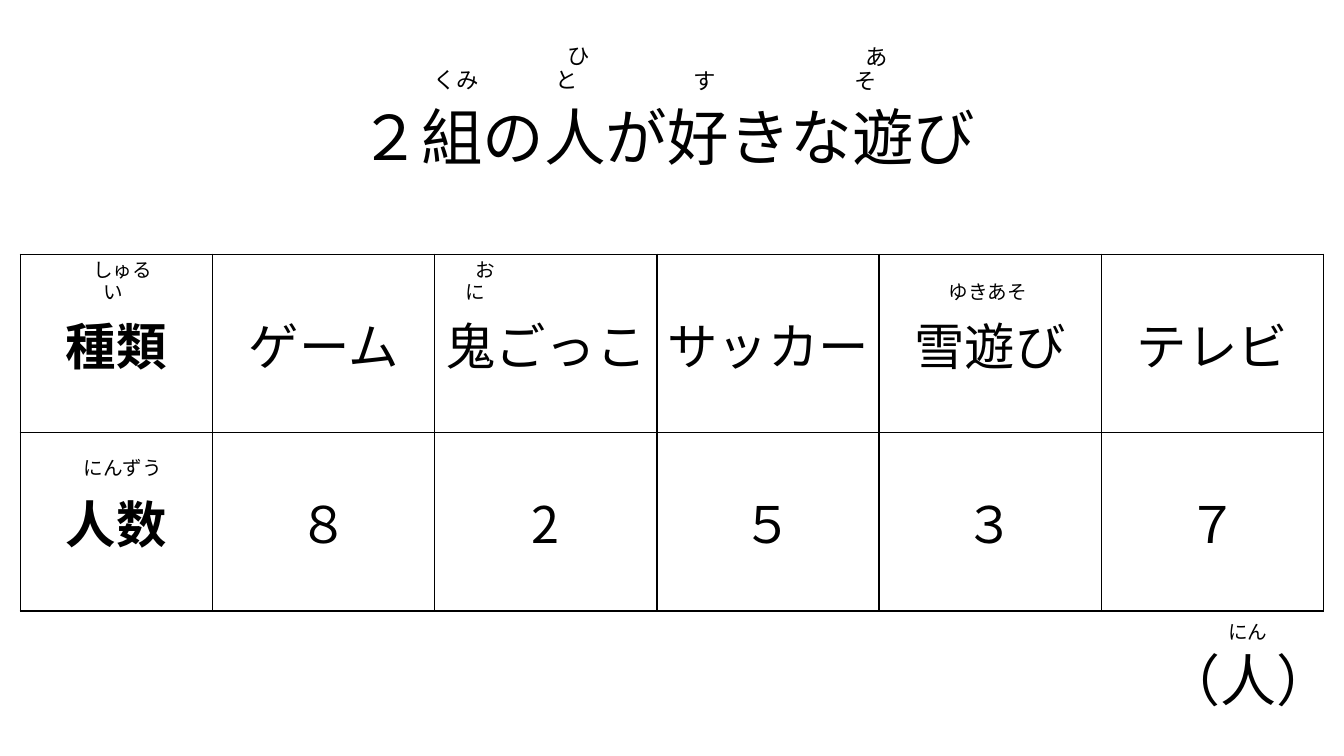
from lxml.etree import SubElement
from pptx import Presentation
from pptx.dml.color import RGBColor
from pptx.enum.text import MSO_ANCHOR as Anchor, MSO_AUTO_SIZE as AutoSize, PP_ALIGN as Align
from pptx.oxml import parse_xml
from pptx.oxml.ns import nsdecls, qn
from pptx.util import Pt

FONT = "Noto Sans CJK JP"
COLORS = {"ink": "000000", "paper": "FFFFFF"}

GAMES = [
    ("種類", "人数"),
    ("ゲーム", "８"),
    ("鬼ごっこ", "2"),
    ("サッカー", "５"),
    ("雪遊び", "３"),
    ("テレビ", "７"),
]
LABEL_WIDTH, GAME_WIDTH, ROW_HEIGHT = 137.5, 158.7, 127.5

TITLE_READINGS = [
    ("　くみ", 283.7, 43.9, 68.4),
    ("　あそ", 589, 44.6, 58.3),
    ("　ひと", 375.8, 43.9, 58.3),
    ("　す", 461.5, 44.6, 68.4),
]
TABLE_READINGS = [
    ("　おに", 313.2, 193.7, 52.6),
    ("　ゆきあそ", 653, 193.7, 91.4),
    ("　しゅるい", 42.5, 193.7, 76.3),
    ("　にんずう", 38.2, 319.7, 85),
]


def write_text(frame, text, size, bold=False, spacing=None):
    """Fill a text frame with one centred, formatted paragraph."""
    para = frame.paragraphs[0]
    para.alignment = Align.CENTER
    if spacing:
        para.line_spacing = spacing
    span = para.add_run()
    span.text = text
    font = span.font
    font.size, font.bold, font.name = Pt(size), bold, FONT
    font.color.rgb = RGBColor.from_string(COLORS["ink"])
    SubElement(span._r.get_or_add_rPr(), qn("a:ea"), typeface=FONT)


def add_title(page, text):
    """Move the title placeholder into place and fill it."""
    title = page.shapes.title
    title.left, title.top, title.width, title.height = Pt(63), Pt(48), Pt(828), Pt(104.4)
    frame = title.text_frame
    frame.auto_size = AutoSize.NONE
    frame.vertical_anchor = Anchor.MIDDLE
    write_text(frame, text, size=44, spacing=0.9)


def add_label(shapes, text, left, top, width, height=26.6, size=14, anchor=Anchor.BOTTOM):
    """Add a wrapping text box with centred text."""
    box = shapes.add_textbox(Pt(left), Pt(top), Pt(width), Pt(height))
    frame = box.text_frame
    frame.word_wrap = True
    frame.vertical_anchor = anchor
    write_text(frame, text, size=size, spacing=0.9)


def add_borders(cell):
    """Draw a thin line on all four sides of a cell."""
    properties = cell._tc.get_or_add_tcPr()
    for index, side in enumerate("LRTB"):
        line = parse_xml(
            f'<a:ln{side} {nsdecls("a")} w="{Pt(1)}"><a:solidFill>'
            f'<a:srgbClr val="{COLORS["ink"]}"/></a:solidFill></a:ln{side}>'
        )
        properties.insert(index, line)


def add_games_table(page):
    """Add the table of games and the number of children for each."""
    width = LABEL_WIDTH + GAME_WIDTH * (len(GAMES) - 1)
    holder = page.shapes.add_table(
        2, len(GAMES), Pt(14.4), Pt(181.5), Pt(width), Pt(2 * ROW_HEIGHT)
    )
    table = holder.table
    table.first_row = table.horz_banding = False
    for row in table.rows:
        row.height = Pt(ROW_HEIGHT)
    for column, texts in enumerate(GAMES):
        is_label = column == 0
        table.columns[column].width = Pt(LABEL_WIDTH if is_label else GAME_WIDTH)
        for row, text in enumerate(texts):
            cell = table.cell(row, column)
            cell.fill.solid()
            cell.fill.fore_color.rgb = RGBColor.from_string(COLORS["paper"])
            cell.vertical_anchor = Anchor.MIDDLE
            write_text(cell.text_frame, text, size=36, bold=is_label)
            add_borders(cell)


def add_unit(page):
    """Add the unit of the counts with its reading, as one group."""
    shapes = page.shapes.add_group_shape().shapes
    add_label(shapes, "（人）", 817.2, 435.6, 149, height=104.4, size=40, anchor=Anchor.MIDDLE)
    add_label(shapes, "にん", 841.7, 414, 99.4, height=49.7)


def main():
    """Build the slide and save it."""
    deck = Presentation()
    deck.slide_width, deck.slide_height = Pt(960), Pt(540)
    page = deck.slides.add_slide(deck.slide_layouts[5])
    add_title(page, "２組の人が好きな遊び")
    add_games_table(page)
    for reading in TITLE_READINGS:
        add_label(page.shapes, *reading, size=16)
    for reading in TABLE_READINGS:
        add_label(page.shapes, *reading)
    add_unit(page)
    deck.save("out.pptx")


if __name__ == "__main__":
    main()
